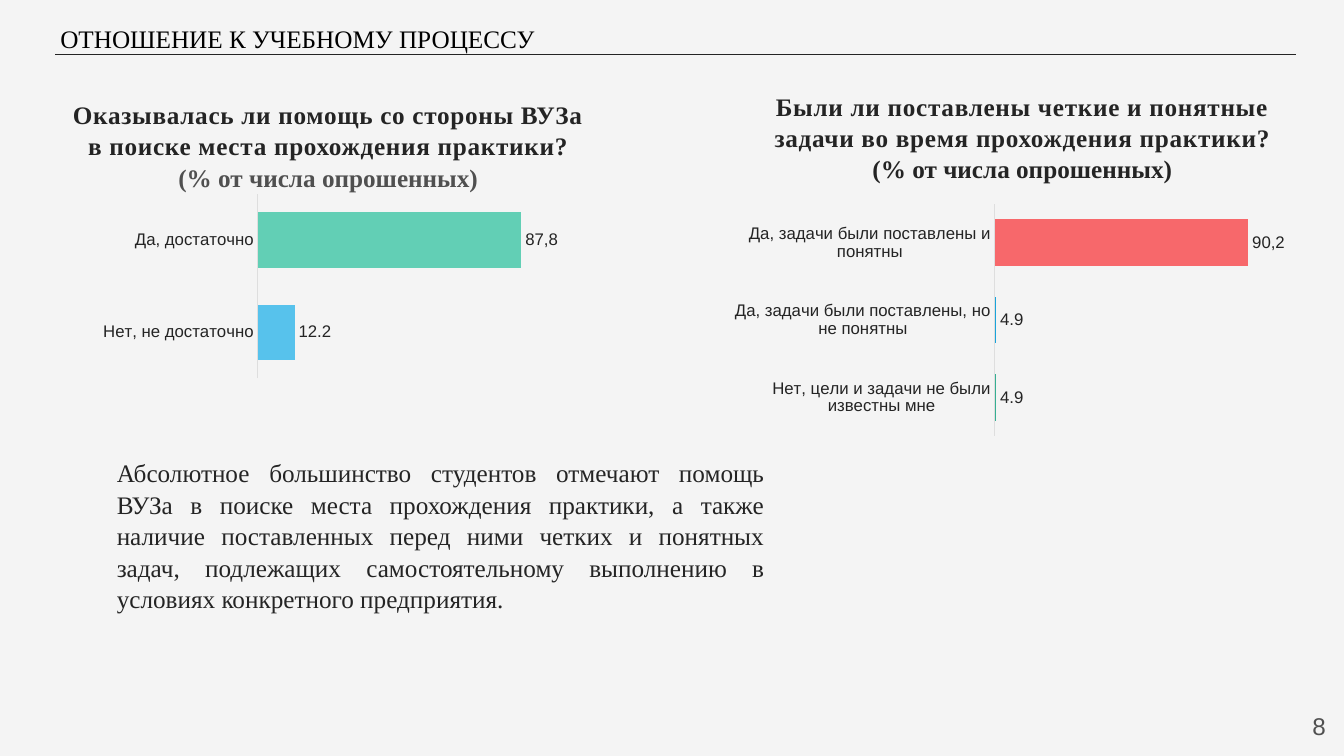
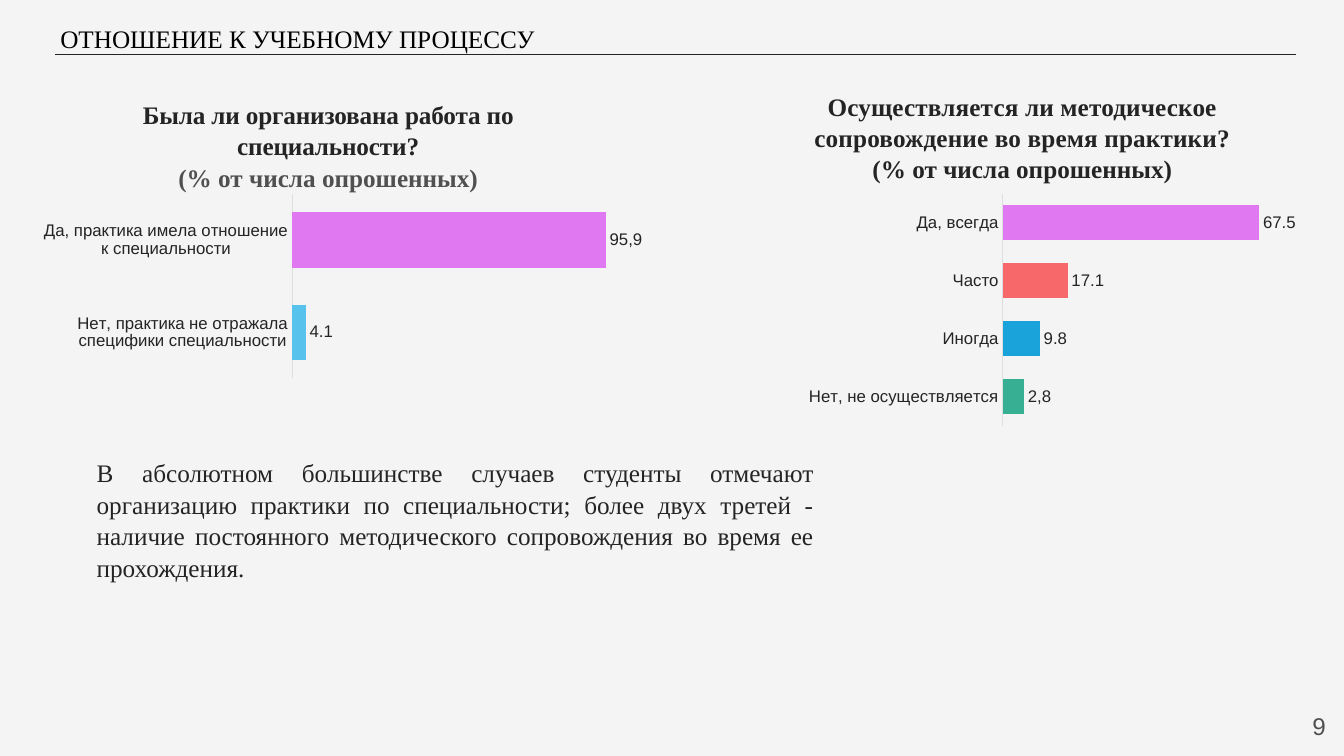
"""Build two survey slides about how students rate their internships."""
from dataclasses import dataclass

from lxml import etree
from pptx import Presentation
from pptx.chart.data import CategoryChartData
from pptx.dml.color import RGBColor
from pptx.enum import chart as ce, shapes, text
from pptx.oxml.ns import qn
from pptx.util import Inches, Pt

PAPER = RGBColor(0xF4, 0xF4, 0xF4)
INK = RGBColor(0x24, 0x24, 0x24)
GRAY = RGBColor(0x50, 0x50, 0x50)
BLACK = RGBColor(0x00, 0x00, 0x00)
AXIS = RGBColor(0xDE, 0xDE, 0xDE)
MINT = RGBColor(0x62, 0xCF, 0xB5)
SKY = RGBColor(0x57, 0xC2, 0xEC)
GREEN = RGBColor(0x36, 0xAF, 0x92)
BLUE = RGBColor(0x19, 0xA3, 0xDA)
CORAL = RGBColor(0xF7, 0x68, 0x6B)
VIOLET = RGBColor(0xE0, 0x78, 0xF1)

SERIF = "Times New Roman"
SANS = "Arial"
TITLE = "ОТНОШЕНИЕ К УЧЕБНОМУ ПРОЦЕССУ"
UNIT = "(% от числа опрошенных)"
CHART_TOP = 1.92


@dataclass(frozen=True)
class Box:
    left: float
    top: float
    width: float
    height: float

    def emu(self) -> tuple:
        return tuple(Inches(v) for v in (self.left, self.top, self.width, self.height))


@dataclass(frozen=True)
class Style:
    size: float = 18
    font: str = SERIF
    color: RGBColor = INK
    bold: bool = False
    align: text.PP_ALIGN = text.PP_ALIGN.LEFT
    spacing: float = 0


@dataclass(frozen=True)
class Bar:
    category: str
    value: float
    color: RGBColor
    label: str = ""


@dataclass(frozen=True)
class Question:
    wording: str
    spacing: float
    box: Box
    plot: tuple[float, float, float, float]
    axis_max: float
    bars: tuple[Bar, ...]


@dataclass(frozen=True)
class SurveySlide:
    number: int
    left: Question
    right: Question
    summary: str
    summary_box: Box


HEADING = Style(color=BLACK)
BODY = Style(align=text.PP_ALIGN.JUSTIFY)
NUMBER = Style(17.3, SANS, GRAY, align=text.PP_ALIGN.RIGHT)

SLIDES = (
    SurveySlide(
        8,
        Question(
            "Оказывалась ли помощь со стороны ВУЗа в поиске места прохождения практики?",
            0.5, Box(0.41, CHART_TOP, 5.51, 2.32), (0.39, 0, 0.54, 0.79), 100,
            (Bar("Нет, не достаточно", 12.2, SKY),
             Bar("Да, достаточно", 87.8, MINT, "87,8")),
        ),
        Question(
            "Были ли поставлены четкие и понятные задачи во время прохождения практики?",
            0.5, Box(7.16, CHART_TOP, 5.76, 2.56), (0.47, 0.04, 0.48, 0.9), 1000,
            (Bar("Нет, цели и задачи не были известны мне", 4.9, GREEN),
             Bar("Да, задачи были поставлены, но не понятны", 4.9, BLUE),
             Bar("Да, задачи были поставлены и понятны", 909.2, CORAL, "90,2")),
        ),
        "Абсолютное большинство студентов отмечают помощь ВУЗа в поиске места "
        "прохождения практики, а также наличие поставленных перед ними четких и "
        "понятных задач, подлежащих самостоятельному выполнению в условиях "
        "конкретного предприятия.",
        Box(1.06, 4.48, 6.62, 1.62),
    ),
    SurveySlide(
        9,
        Question(
            "Была ли организована работа по специальности?",
            -0.1, Box(0.41, CHART_TOP, 6.38, 2.32), (0.39, 0, 0.61, 0.79), 120,
            (Bar("Нет, практика не отражала специфики специальности", 4.1, SKY),
             Bar("Да, практика имела отношение к специальности", 95.9, VIOLET, "95,9")),
        ),
        Question(
            "Осуществляется ли методическое сопровождение во время практики?",
            0.1, Box(7.16, CHART_TOP, 5.8, 2.56), (0.48, 0, 0.52, 0.9), 80,
            (Bar("Нет, не осуществляется", 5.6, GREEN, "2,8"),
             Bar("Иногда", 9.8, BLUE),
             Bar("Часто", 17.1, CORAL),
             Bar("Да, всегда", 67.5, VIOLET)),
        ),
        "В абсолютном большинстве случаев студенты отмечают организацию практики "
        "по специальности; более двух третей - наличие постоянного методического "
        "сопровождения во время ее прохождения.",
        Box(0.86, 4.48, 7.31, 1.31),
    ),
)


def style_font(font, size: float, name: str, color: RGBColor, bold: bool = False) -> None:
    font.size, font.name, font.bold = Pt(size), name, bold
    font.color.rgb = color


def add_text(s, box: Box, lines: list[tuple[str, Style]], inset: float = 0.1,
             v_inset: float = 0.05) -> None:
    tf = s.shapes.add_textbox(*box.emu()).text_frame
    tf.word_wrap = True
    tf.margin_left = tf.margin_right = Inches(inset)
    tf.margin_top = tf.margin_bottom = Inches(v_inset)
    tf.text = "\n".join(line for line, _ in lines)
    for p, (_, style) in zip(tf.paragraphs, lines):
        p.alignment = style.align
        p.line_spacing = 1.04 if style.font == SERIF else 1.0
        for r in p.runs:
            style_font(r.font, style.size, style.font, style.color, style.bold)
            r.font._element.set("spc", str(round(style.spacing * 100)))


def add_rule(s) -> None:
    line = s.shapes.add_connector(shapes.MSO_CONNECTOR.STRAIGHT, Inches(0.55), Inches(0.54),
                                  Inches(12.85), Inches(0.54))
    line.line.color.rgb = INK
    line.line.width = Pt(0.75)
    etree.SubElement(line.element.spPr, qn("a:effectLst"))


def set_plot_layout(chart, fractions: tuple[float, float, float, float]) -> None:
    area = chart.element.find(".//" + qn("c:plotArea"))
    for old in area.findall(qn("c:layout")):
        area.remove(old)
    layout = etree.Element(qn("c:layout"))
    manual = etree.SubElement(layout, qn("c:manualLayout"))
    settings = [("layoutTarget", "inner"), ("xMode", "edge"), ("yMode", "edge")]
    for tag, value in settings + list(zip("xywh", fractions)):
        etree.SubElement(manual, qn(f"c:{tag}"), val=str(value))
    area.insert(0, layout)


def add_bars(s, question: Question) -> None:
    data = CategoryChartData()
    data.categories = [bar.category for bar in question.bars]
    data.add_series("Series 1", [bar.value for bar in question.bars])
    chart = s.shapes.add_chart(ce.XL_CHART_TYPE.BAR_CLUSTERED, *question.box.emu(), data).chart
    chart.has_legend = chart.has_title = False
    style_font(chart.font, 12, SANS, INK)
    set_plot_layout(chart, question.plot)

    categories, values = chart.category_axis, chart.value_axis
    categories.major_tick_mark = categories.minor_tick_mark = ce.XL_TICK_MARK.NONE
    categories.format.line.color.rgb = AXIS
    categories.format.line.width = Pt(0.75)
    style_font(categories.tick_labels.font, 12, SANS, INK)
    values.minimum_scale, values.maximum_scale = 0, question.axis_max
    values.has_major_gridlines = values.visible = False

    plot = chart.plots[0]
    plot.gap_width, plot.vary_by_categories = 66, False
    series = plot.series[0]
    series.format.fill.solid()
    series.format.fill.fore_color.rgb = MINT
    labels = series.data_labels
    labels.show_value = True
    labels.position = ce.XL_LABEL_POSITION.OUTSIDE_END
    style_font(labels.font, 12, SANS, INK)
    for i, bar in enumerate(question.bars):
        point = series.points[i]
        point.format.fill.solid()
        point.format.fill.fore_color.rgb = bar.color
        if bar.label:
            tf = point.data_label.text_frame
            tf.text = bar.label
            style_font(tf.paragraphs[0].runs[0].font, 12, SANS, INK)
            point.data_label.position = ce.XL_LABEL_POSITION.OUTSIDE_END


def add_question(s, question: Question, box: Box, unit_color: RGBColor, inset: float,
                 v_inset: float) -> None:
    center = text.PP_ALIGN.CENTER
    add_text(s, box, [
        (question.wording, Style(bold=True, align=center, spacing=question.spacing)),
        (UNIT, Style(color=unit_color, bold=True, align=center)),
    ], inset, v_inset)
    add_bars(s, question)


def add_survey_slide(prs, content: SurveySlide) -> None:
    s = prs.slides.add_slide(prs.slide_layouts[6])
    add_rule(s)
    add_text(s, Box(12.48, 6.93, 0.8, 0.57), [(str(content.number), NUMBER)], 0.13, 0.13)
    add_text(s, Box(0.5, 0.17, 12.46, 0.4), [(TITLE, HEADING)])
    add_question(s, content.left, Box(0.5, 0.84, 5.51, 1.18), GRAY, 0.13, 0.13)
    add_question(s, content.right, Box(7.32, 0.84, 5.64, 1.01), INK, 0.1, 0.05)
    add_text(s, content.summary_box, [(content.summary, BODY)])


def main() -> None:
    prs = Presentation()
    prs.slide_width, prs.slide_height = Inches(13.33), Inches(7.5)
    fill = prs.slide_master.background.fill
    fill.solid()
    fill.fore_color.rgb = PAPER
    for content in SLIDES:
        add_survey_slide(prs, content)
    prs.save("out.pptx")


if __name__ == "__main__":
    main()
